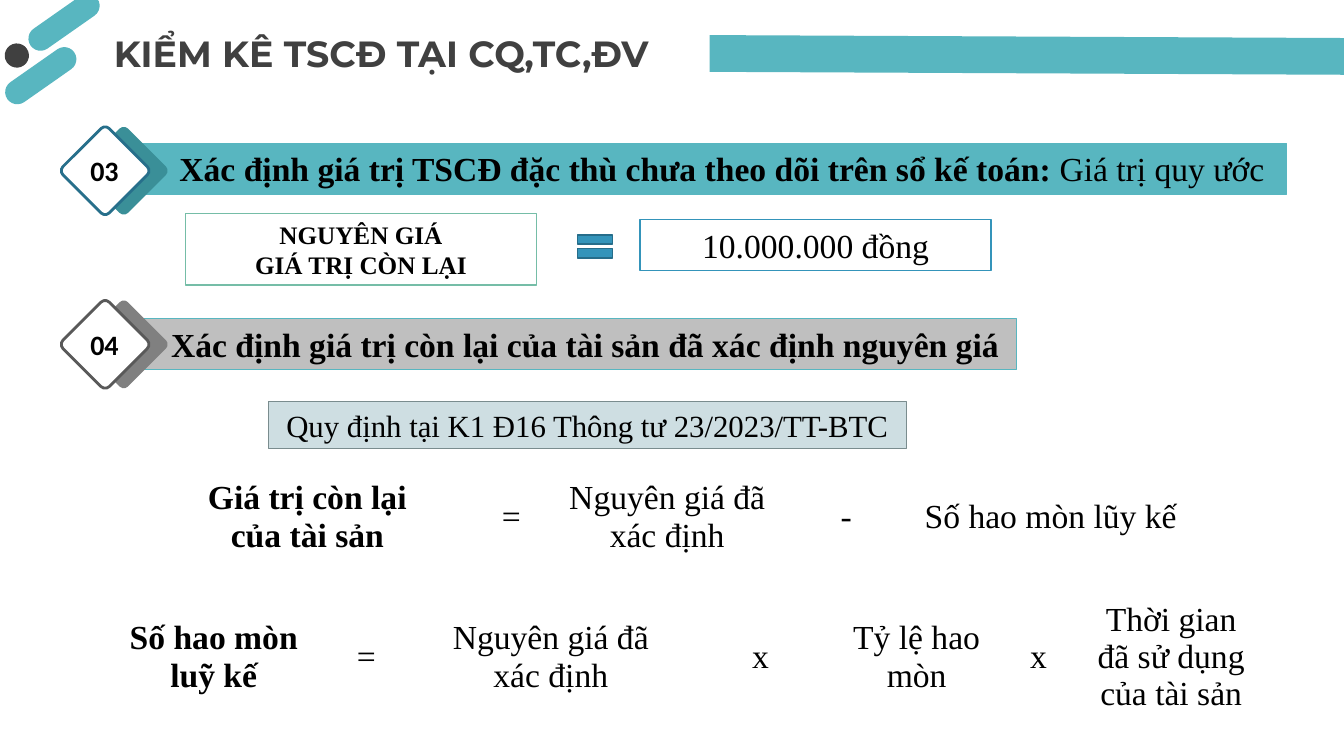
from dataclasses import dataclass

import pptx
import pptx.dml.color
import pptx.enum.shapes
import pptx.enum.text
import pptx.oxml.ns
import pptx.util
from lxml import etree

Pt = pptx.util.Pt
SHAPE = pptx.enum.shapes.MSO_SHAPE
ALIGN = pptx.enum.text.PP_ALIGN
MIDDLE = pptx.enum.text.MSO_ANCHOR.MIDDLE


@dataclass(frozen=True)
class Theme:
    teal: str = "58B6C0"
    dark_teal: str = "3A8F98"
    green: str = "75BDA7"
    blue: str = "3494BA"
    deep_blue: str = "266D8A"
    badge_blue: str = "276F8B"
    pale_blue: str = "CEDEE2"
    slate: str = "7A8C8E"
    silver: str = "BFBFBF"
    gray: str = "808080"
    dark_gray: str = "595959"
    charcoal: str = "404040"
    white: str = "FFFFFF"
    black: str = "000000"
    serif: str = "Times New Roman"
    sans: str = "Calibri"
    heading: str = "Montserrat"
    title_size: int = 26
    body_size: int = 24
    note_size: int = 22
    badge_size: int = 20
    small_size: int = 18


THEME = Theme()


def rgb(color):
    return pptx.dml.color.RGBColor.from_string(color)


def style_run(run, size, font=THEME.serif, bold=False, color=THEME.black):
    run.font.size = Pt(size)
    run.font.name = font
    run.font.bold = bold
    run.font.color.rgb = rgb(color)


def write(frame, text, size, align=ALIGN.CENTER, **style):
    frame.text = text
    for paragraph in frame.paragraphs:
        paragraph.alignment = align
        for run in paragraph.runs:
            style_run(run, size, **style)


def add_block(slide, kind, box, fill, line=None, width=1, rotation=0, corner=None):
    block = slide.shapes.add_shape(kind, *map(Pt, box))
    block.shadow.inherit = False
    block.rotation = rotation
    if corner is not None:
        block.adjustments[0] = corner
    block.fill.solid()
    block.fill.fore_color.rgb = rgb(fill)
    if line:
        block.line.color.rgb = rgb(line)
        block.line.width = Pt(width)
    else:
        block.line.fill.background()
    return block


def add_label(slide, box, text, size, align, inset=(7.2, 3.6), **style):
    frame = slide.shapes.add_textbox(*map(Pt, box)).text_frame
    frame.word_wrap = True
    frame.margin_left = frame.margin_right = Pt(inset[0])
    frame.margin_top = frame.margin_bottom = Pt(inset[1])
    write(frame, text, size, align, **style)


def add_panel(slide, box, text, size, fill, line, width=1, bold=False):
    panel = add_block(slide, SHAPE.RECTANGLE, box, fill, line, width)
    panel.text_frame.word_wrap = True
    write(panel.text_frame, text, size, bold=bold)


def add_banner(slide, top, width, fill, inset, heading, detail=""):
    banner = add_block(slide, SHAPE.RECTANGLE, (91, top, width, 36.4), fill, THEME.teal, 0.5)
    frame = banner.text_frame
    frame.word_wrap = True
    frame.margin_left = Pt(inset)
    write(frame, heading, THEME.body_size, ALIGN.LEFT, bold=True)
    if detail:
        run = frame.paragraphs[0].add_run()
        run.text = detail
        style_run(run, THEME.body_size)


def add_badge(slide, top, number, back, outline):
    for left, fill, line in ((65, back, None), (51.7, THEME.white, outline)):
        add_block(slide, SHAPE.ROUNDED_RECTANGLE, (left, top, 46.8, 46.8), fill, line, 2,
                  rotation=45, corner=0.09)
    add_label(slide, (57, top + 7.5, 35.3, 31.5), number, THEME.badge_size,
              ALIGN.CENTER, inset=(0, 3.6), font=THEME.sans, bold=True)


def add_formula(slide, left, top, height, widths, terms, inset):
    """A one-row table whose first term is bold."""
    frame = slide.shapes.add_table(1, len(terms), Pt(left), Pt(top), Pt(sum(widths)), Pt(height))
    formula = frame.table
    formula.first_row = formula.horz_banding = False
    for column, (width, term) in enumerate(zip(widths, terms)):
        formula.columns[column].width = Pt(width)
        cell = formula.cell(0, column)
        cell.fill.background()
        cell.vertical_anchor = MIDDLE
        cell.margin_left = cell.margin_right = Pt(inset[0])
        cell.margin_top = cell.margin_bottom = Pt(inset[1])
        write(cell.text_frame, term, THEME.body_size, bold=column == 0)


def add_stripe(slide, start, end, color, width):
    stripe = slide.shapes.add_connector(
        pptx.enum.shapes.MSO_CONNECTOR.STRAIGHT, *map(Pt, start + end))
    stripe.line.color.rgb = rgb(color)
    stripe.line.width = Pt(width)
    properties = stripe._element.spPr
    etree.SubElement(properties, pptx.oxml.ns.qn("a:effectLst"))


def main():
    deck = pptx.Presentation()
    deck.slide_width, deck.slide_height = Pt(960), Pt(540)
    slide = deck.slides.add_slide(deck.slide_layouts[6])

    # Corner ornament and title
    for box, color in (((16.6, 7.2, 58.3, 17.3), THEME.teal),
                       ((0, 45.4, 58.3, 17.3), THEME.teal),
                       ((3.4, 31, 17.3, 17.3), THEME.charcoal)):
        add_block(slide, SHAPE.ROUNDED_RECTANGLE, box, color, rotation=325, corner=0.5)
    add_label(slide, (74.2, 18.7, 432, 38.9), "KIỂM KÊ TSCĐ TẠI CQ,TC,ĐV", THEME.title_size,
              ALIGN.LEFT, font=THEME.heading, bold=True, color=THEME.charcoal)
    add_stripe(slide, (506.9, 38.2), (960, 40.3), THEME.teal, 26.25)

    # Section 03: conventional value
    add_banner(slide, 102.2, 828, THEME.teal, 37.2,
               "Xác định giá trị TSCĐ đặc thù chưa theo dõi trên sổ kế toán: ",
               "Giá trị quy ước")
    add_panel(slide, (132.5, 152.6, 250.6, 51), "NGUYÊN GIÁ\nGIÁ TRỊ CÒN LẠI",
              THEME.small_size, THEME.white, THEME.green, bold=True)
    add_panel(slide, (457.2, 157, 250.6, 36.4), "10.000.000 đồng",
              THEME.body_size, THEME.white, THEME.blue)
    add_block(slide, SHAPE.MATH_EQUAL, (408.2, 162, 33.8, 28), THEME.blue, THEME.deep_blue)
    add_badge(slide, 98.6, "03", THEME.dark_teal, THEME.badge_blue)

    # Section 04: remaining value
    add_banner(slide, 227.5, 635, THEME.silver, 31.2,
               "Xác định giá trị còn lại của tài sản đã xác định nguyên giá")
    add_badge(slide, 222.6, "04", THEME.gray, THEME.dark_gray)
    add_panel(slide, (191.5, 286.6, 455.8, 33.8), "Quy định tại K1 Đ16 Thông tư 23/2023/TT-BTC",
              THEME.note_size, THEME.pale_blue, THEME.slate, 0.5)

    # Formulas
    add_formula(slide, 98.6, 331.2, 76.3, (241.9, 49.7, 172.8, 82.8, 209.5),
                ("Giá trị còn lại\ncủa tài sản", "=", "Nguyên giá đã xác định",
                 "-", "Số hao mòn lũy kế"), inset=(5.4, 0))
    add_formula(slide, 82.1, 422.6, 93.6, (141.1, 77, 186.5, 113, 110.2, 64.1, 125.3),
                ("Số hao mòn luỹ kế", "=", "Nguyên giá đã xác định", "x",
                 "Tỷ lệ hao mòn", "x", "Thời gian đã sử dụng của tài sản"), inset=(7.2, 3.6))

    deck.save("out.pptx")


if __name__ == "__main__":
    main()
